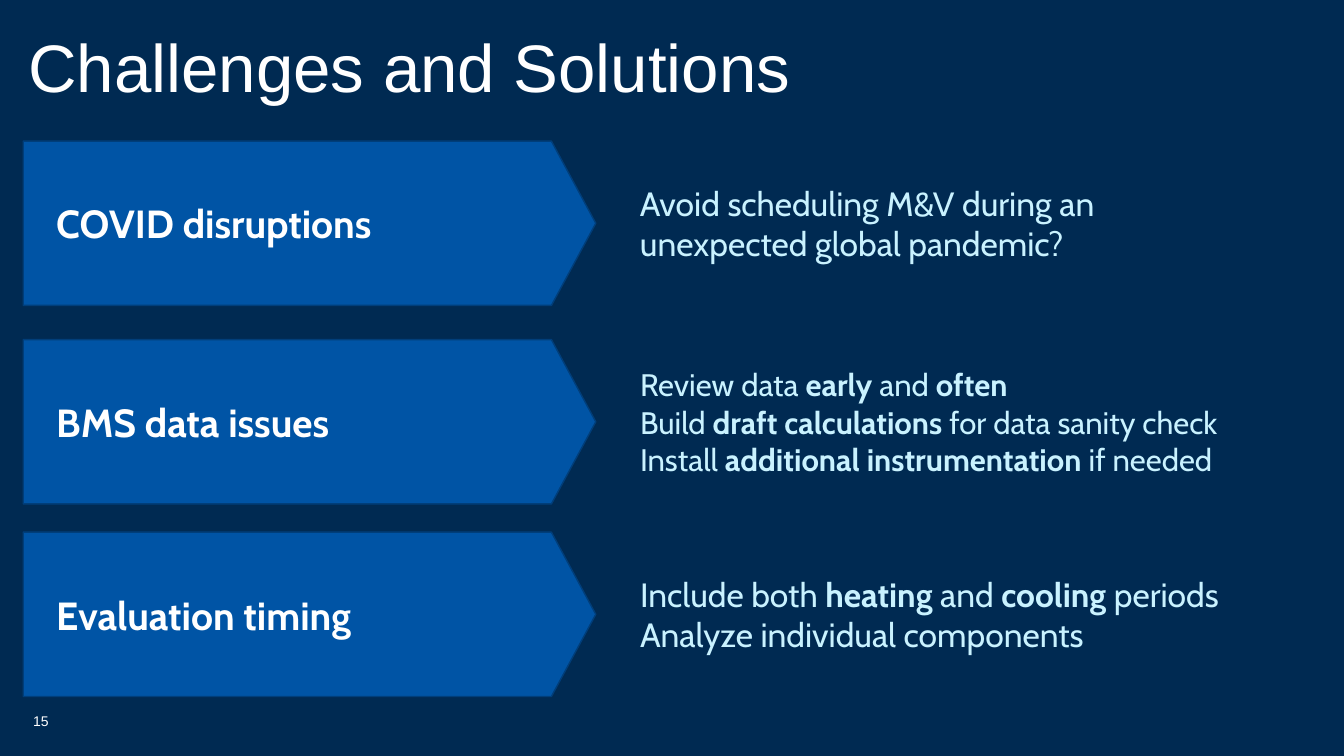
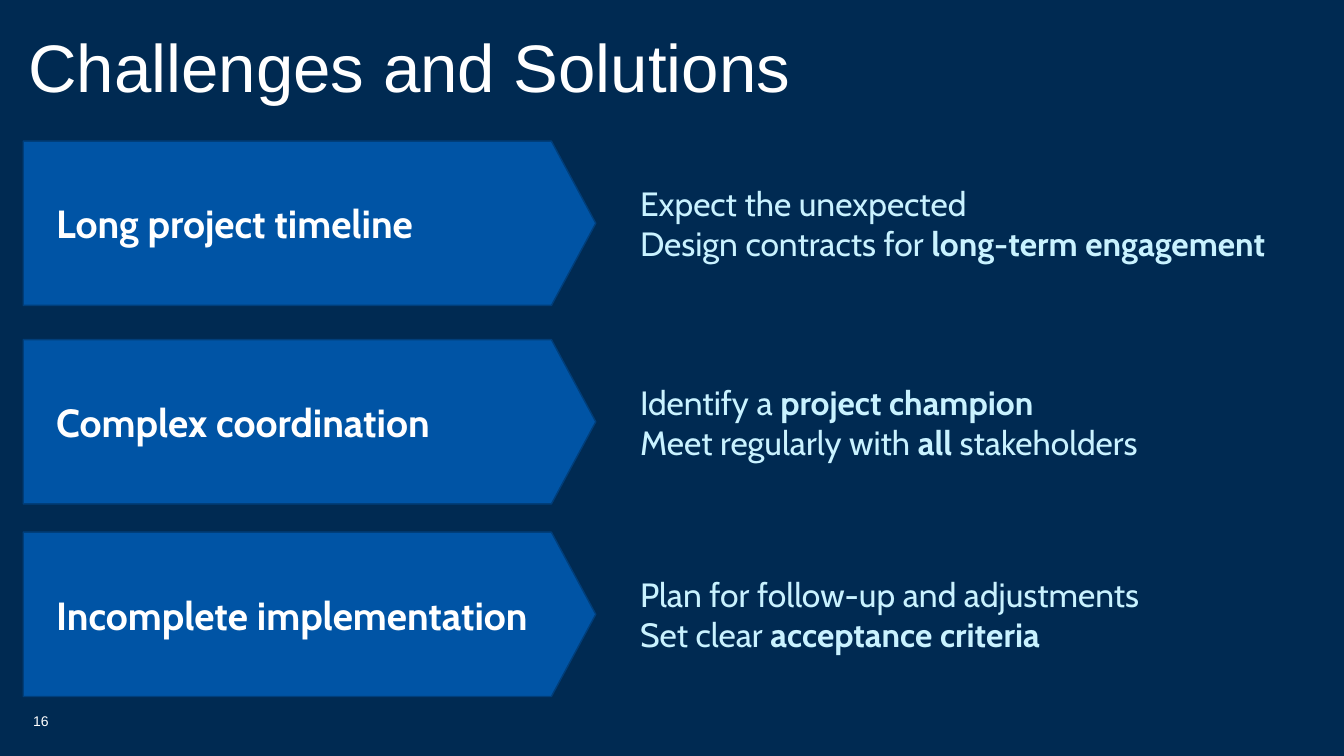
from pptx import Presentation
from pptx.dml.color import RGBColor
from pptx.enum.shapes import MSO_SHAPE
from pptx.enum.text import MSO_ANCHOR
from pptx.util import Inches, Pt

ROW_TOPS = (18.67, 44.93, 70.4)
ROW_HEIGHT = 21.73
LEFT = 1.73
LABEL_LEFT = 3.45
ANSWER_LEFT = 46.88
ANSWER_WIDTH = 52.05
FIRST_NUMBER = 15

SLIDES = [
    [
        ("COVID disruptions",
         ["Avoid scheduling M&V during an unexpected global pandemic?"],
         {"width": 41.33}),
        ("BMS data issues",
         ["Review data **early** and **often**",
          "Build **draft calculations **for data sanity check",
          "Install **additional instrumentation** if needed"],
         {"size": 22.2}),
        ("Evaluation timing",
         ["Include both **heating **and **cooling **periods",
          "Analyze individual components"], {}),
    ],
    [
        ("Long project timeline",
         ["Expect the unexpected",
          "Design contracts for **long-term engagement**"], {}),
        ("Complex coordination",
         ["Identify a **project champion**",
          "Meet regularly with **all** stakeholders"], {}),
        ("Incomplete implementation",
         ["Plan for follow-up and adjustments",
          "Set clear **acceptance criteria**"], {}),
    ],
]


def color(value):
    return RGBColor.from_string(value)


class Deck:
    """Draws styled elements on the current slide, placed in percent of its size."""

    NAVY, BLUE, EDGE = "002A52", "0054A5", "003E7A"
    WHITE, ICE = "FFFFFF", "C9F2FF"
    HEAD_FONT, BODY_FONT = "Arial", "Cabin"

    def __init__(self):
        self.prs = Presentation()
        self.prs.slide_width = Inches(13.33)
        self.prs.slide_height = Inches(7.5)
        self.s = None

    def box(self, x, y, w, h):
        width, height = self.prs.slide_width, self.prs.slide_height
        return [int(share * full / 100) for share, full in
                ((x, width), (y, height), (w, width), (h, height))]

    def new_slide(self, number):
        self.s = self.prs.slides.add_slide(self.prs.slide_layouts[6])
        fill = self.s.background.fill
        fill.solid()
        fill.fore_color.rgb = color(self.NAVY)
        self.title("Challenges and Solutions")
        self.text((LEFT, 92.67, 22.5, 5.33), [str(number)], 10,
                  self.HEAD_FONT, self.WHITE)

    def text(self, place, lines, size, font, ink, bold=False):
        tf = self.s.shapes.add_textbox(*self.box(*place)).text_frame
        tf.word_wrap = True
        tf.vertical_anchor = MSO_ANCHOR.MIDDLE
        tf.text = "\n".join(line.replace("**", "") for line in lines)
        for p, line in zip(tf.paragraphs, lines):
            p.text = ""
            for i, part in enumerate(line.split("**")):
                if part:
                    r = p.add_run()
                    r.text = part
                    r.font.size = Pt(size)
                    r.font.name = font
                    r.font.bold = bold or i % 2 == 1
                    r.font.color.rgb = color(ink)
        return tf

    def title(self, words):
        tf = self.text((LEFT, 3.6, 96.6, 10.53), [words], 48,
                       self.HEAD_FONT, self.WHITE)
        tf.vertical_anchor = MSO_ANCHOR.BOTTOM
        tf.margin_left, tf.margin_right = Inches(0.05), Inches(0.1)
        tf.margin_top = tf.margin_bottom = 0
        tf.paragraphs[0].line_spacing = 0.9

    def arrow(self, top):
        sp = self.s.shapes.add_shape(
            MSO_SHAPE.PENTAGON, *self.box(LEFT, top, 42.6, ROW_HEIGHT))
        sp.adjustments[0] = 0.27
        sp.shadow.inherit = False
        sp.fill.solid()
        sp.fill.fore_color.rgb = color(self.BLUE)
        sp.line.color.rgb = color(self.EDGE)
        sp.line.width = Pt(1)

    def challenge(self, top, words):
        self.arrow(top)
        tf = self.text((LABEL_LEFT, top, 39.3, ROW_HEIGHT), [words], 28,
                       self.BODY_FONT, self.WHITE, bold=True)
        tf.paragraphs[0].space_after = Pt(12)

    def solution(self, top, lines, size=24, width=ANSWER_WIDTH):
        self.text((ANSWER_LEFT, top, width, ROW_HEIGHT), lines, size,
                  self.BODY_FONT, self.ICE)


def main():
    deck = Deck()
    for number, rows in enumerate(SLIDES, FIRST_NUMBER):
        deck.new_slide(number)
        for top, (challenge, lines, options) in zip(ROW_TOPS, rows):
            deck.challenge(top, challenge)
            deck.solution(top, lines, **options)
    deck.prs.save("out.pptx")


if __name__ == "__main__":
    main()
